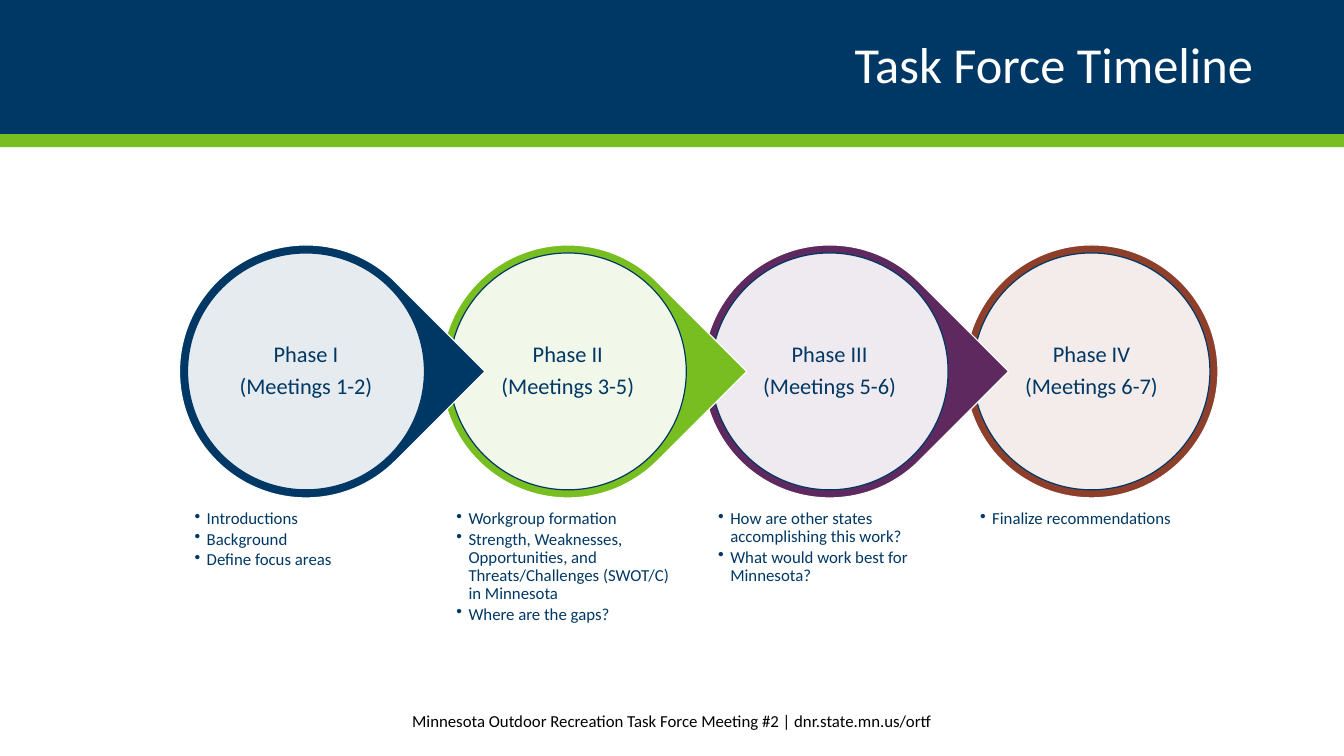
from pptx import Presentation
from pptx.dml.color import RGBColor
from pptx.enum.shapes import MSO_SHAPE as Kind
from pptx.enum.text import MSO_ANCHOR as Anchor, PP_ALIGN as Align
from pptx.oxml.ns import qn
from pptx.util import Inches, Pt
from lxml.etree import SubElement

# Content
TITLE = "Task Force Timeline"
FOOTER = "Minnesota Outdoor Recreation Task Force Meeting #2 | dnr.state.mn.us/ortf"
PHASES = [
    ("Phase I", "(Meetings 1-2)", "navy",
     ["Introductions", "Background", "Define focus areas"]),
    ("Phase II", "(Meetings 3-5)", "green",
     ["Workgroup formation",
      "Strength, Weaknesses, Opportunities, and Threats/Challenges (SWOT/C) in Minnesota",
      "Where are the gaps?"]),
    ("Phase III", "(Meetings 5-6)", "plum",
     ["How are other states accomplishing this work?",
      "What would work best for Minnesota?"]),
    ("Phase IV", "(Meetings 6-7)", "rust", ["Finalize recommendations"]),
]
COLORS = {"navy": "003865", "green": "78BE21", "plum": "5D295F",
          "rust": "8D3F2B", "white": "FFFFFF", "black": "000000"}
FONT = "Calibri"

# Layout, in inches
WIDTH, HEIGHT = 13.33, 7.5
HEAD, STRIPE = 1.33, 0.13
LEFT, LAST, TOP = 1.78, 9.57, 2.43
RING, DISC, LABEL = 2.51, 2.35, 1.68
STEP = (LAST - LEFT) / (len(PHASES) - 1)
NOTE_TOP, NOTE_H = 4.99, 1.38


def color(name):
    return RGBColor.from_string(COLORS[name])


def add_bullet(para):
    props = para._p.get_or_add_pPr()
    props.set("marL", str(Inches(0.12)))
    props.set("indent", str(-Inches(0.12)))
    SubElement(props, qn("a:buChar")).set("char", "•")


def write(shape, lines, size=12, ink="navy", align=Align.LEFT,
          anchor=Anchor.MIDDLE, inset=(0.1, 0.05), space=0, after=0, bullet=False):
    frame = shape.text_frame
    frame.word_wrap = True
    frame.vertical_anchor = anchor
    frame.margin_left = frame.margin_right = Inches(inset[0])
    frame.margin_top = frame.margin_bottom = Inches(inset[1])
    for i, line in enumerate(lines):
        para = frame.add_paragraph() if i else frame.paragraphs[0]
        para.alignment = align
        para.line_spacing = space or 1.0
        para.space_before, para.space_after = Pt(0), Pt(after)
        if bullet:
            add_bullet(para)
        run = para.add_run()
        run.text = line
        run.font.name, run.font.size = FONT, Pt(size)
        run.font.color.rgb = color(ink)


def add_box(slide, left, top, width, height):
    return slide.shapes.add_textbox(*map(Inches, (left, top, width, height)))


def add_form(slide, kind, left, top, width, height, fill, line=None, alpha=None):
    form = slide.shapes.add_shape(kind, *map(Inches, (left, top, width, height)))
    form.shadow.inherit = False
    form.fill.solid()
    form.fill.fore_color.rgb = color(fill)
    if alpha:
        tone = form.fill._xPr.find(qn("a:solidFill"))[0]
        SubElement(tone, qn("a:alpha")).set("val", str(alpha * 1000))
    if line:
        form.line.color.rgb = color(line)
        form.line.width = Pt(0.85)
    else:
        form.line.fill.background()
    return form


def add_phase(slide, index):
    name, meets, hue, notes = PHASES[index]
    left = LEFT + index * STEP
    mid, center = left + RING / 2, TOP + RING / 2

    # Ring, pointing at the next phase unless it is the last
    final = index == len(PHASES) - 1
    ring = add_form(slide, Kind.OVAL if final else Kind.TEAR,
                    left, TOP, RING, RING, hue, "white")
    ring.rotation = 0 if final else 45
    add_form(slide, Kind.OVAL, mid - DISC / 2, center - DISC / 2, DISC, DISC,
             "white", "navy", alpha=90)

    # Label and notes
    label = add_box(slide, mid - LABEL / 2, center - LABEL / 2, LABEL, LABEL)
    write(label, [name, meets], size=16, align=Align.CENTER,
          inset=(0.02, 0.02), space=0.9, after=5.6)
    box = add_box(slide, mid - DISC / 2, NOTE_TOP, DISC, NOTE_H)
    write(box, notes, anchor=Anchor.TOP, inset=(0.07, 0.07),
          space=0.9, after=1.8, bullet=True)


def main():
    deck = Presentation()
    deck.slide_width, deck.slide_height = Inches(WIDTH), Inches(HEIGHT)
    slide = deck.slides.add_slide(deck.slide_layouts[5])

    # Header
    title = slide.shapes.title
    title.left, title.top = Inches(0), Inches(0)
    title.width, title.height = Inches(WIDTH), Inches(HEAD)
    title.fill.solid()
    title.fill.fore_color.rgb = color("navy")
    write(title, [TITLE], size=36, ink="white", align=Align.RIGHT,
          inset=(0.9, 0.05), space=0.9)
    add_form(slide, Kind.RECTANGLE, 0, HEAD, WIDTH, STRIPE, "green")

    # Phases, last one at the back
    for index in reversed(range(len(PHASES))):
        add_phase(slide, index)

    # Footer
    write(add_box(slide, 3.61, 6.95, 6.11, 0.4), [FOOTER],
          ink="black", align=Align.CENTER)
    deck.save("out.pptx")


if __name__ == "__main__":
    main()
